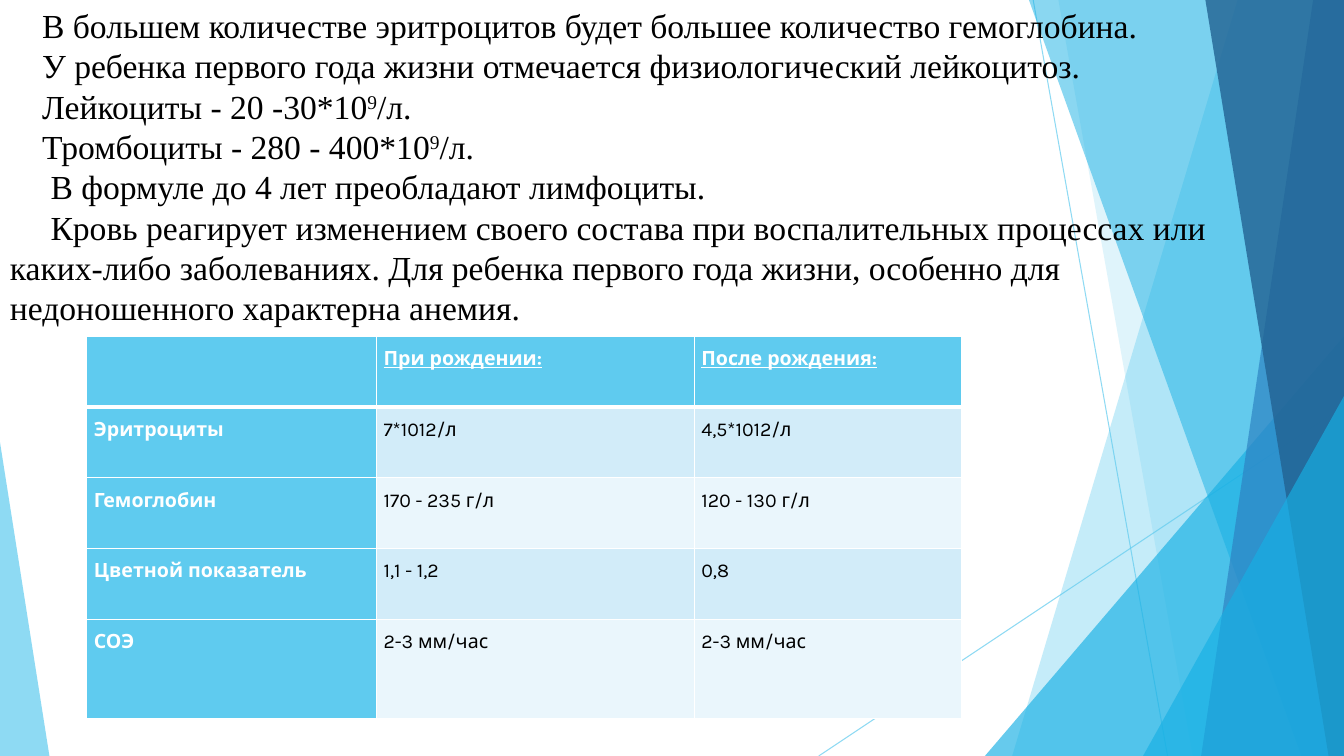
from dataclasses import dataclass

from lxml.etree import SubElement
from pptx import Presentation
from pptx.dml.color import RGBColor
from pptx.enum.shapes import MSO_CONNECTOR, MSO_SHAPE
from pptx.oxml.ns import qn
from pptx.util import Pt

SKY = RGBColor(0x5F, 0xCB, 0xEF)
CYAN = RGBColor(0x17, 0xB0, 0xE4)
BLUE = RGBColor(0x2E, 0x83, 0xC3)
NAVY = RGBColor(0x22, 0x62, 0x92)
BAND_DARK = RGBColor(0xD2, 0xEC, 0xF9)
BAND_LIGHT = RGBColor(0xEA, 0xF6, 0xFC)
WHITE = RGBColor(0xFF, 0xFF, 0xFF)
BLACK = RGBColor(0, 0, 0)

WIDTH, HEIGHT = 960, 540


@dataclass(frozen=True)
class Ray:
    start: tuple[float, float]
    end: tuple[float, float]


@dataclass(frozen=True)
class Facet:
    """A panel reaching the right edge, slanting from top_x down to bottom_x."""
    top_x: float
    bottom_x: float
    color: RGBColor
    opacity: int


@dataclass(frozen=True)
class Corner:
    """A right triangle standing on the bottom edge; apex is 0 (left) or 1 (right)."""
    left: float
    top: float
    width: float
    apex: int
    color: RGBColor
    opacity: int


@dataclass(frozen=True)
class Statement:
    """A paragraph whose odd parts between ^ marks are superscript."""
    text: str
    indent: float = 23


DECOR = [
    Ray((738, 0), (834, HEIGHT)),
    Ray((WIDTH, 290), (584.8, HEIGHT)),
    Facet(884, 723, SKY, 36),
    Facet(756, 852, SKY, 20),
    Corner(703.5, 240, 256.5, 1, CYAN, 66),
    Facet(735, 929.5, CYAN, 50),
    Facet(938, 858, BLUE, 70),
    Facet(861, 949, NAVY, 80),
    Corner(816.5, 283, 143.5, 1, CYAN, 66),
    Corner(0, 316, 35.3, 0, SKY, 70),
]

STATEMENTS = [
    Statement("В большем количестве эритроцитов будет большее количество гемоглобина."),
    Statement("У ребенка первого года жизни отмечается физиологический лейкоцитоз."),
    Statement("Лейкоциты - 20 -30*10^9^/л."),
    Statement("Тромбоциты - 280 - 400*10^9^/л."),
    Statement("В формуле до 4 лет преобладают лимфоциты.", 29),
    Statement("Кровь реагирует изменением своего состава при воспалительных процессах "
              "или каких-либо заболеваниях. Для ребенка первого года жизни, особенно "
              "для недоношенного характерна анемия.", 29),
]

BLOOD_VALUES = [
    ("", "При рождении:", "После рождения:"),
    ("Эритроциты", "7*1012/л", "4,5*1012/л"),
    ("Гемоглобин", "170 - 235 г/л", "120 - 130 г/л"),
    ("Цветной показатель", "1,1 - 1,2", "0,8"),
    ("СОЭ", "2-3 мм/час", "2-3 мм/час"),
]
COLUMN_WIDTHS = (207, 227, 191)
ROW_HEIGHTS = (50.6, 50.6, 50.6, 50.6, 70.6)


def set_opacity(fill_owner, percent: int) -> None:
    color = next(fill_owner.iter(qn("a:srgbClr")))
    SubElement(color, qn("a:alpha")).set("val", str(percent * 1000))


def paint(shape, color: RGBColor, opacity: int) -> None:
    shape.shadow.inherit = False
    shape.fill.solid()
    shape.fill.fore_color.rgb = color
    set_opacity(shape._element.spPr, opacity)
    shape.line.fill.background()


def draw_ray(shapes, ray: Ray) -> None:
    line = shapes.add_connector(MSO_CONNECTOR.STRAIGHT,
                                *map(Pt, ray.start), *map(Pt, ray.end))
    line.line.color.rgb = SKY
    line.line.width = Pt(0.75)
    properties = line._element.spPr
    set_opacity(properties, 70)
    SubElement(properties, qn("a:effectLst"))


def draw_facet(shapes, facet: Facet) -> None:
    outline = shapes.build_freeform(Pt(facet.top_x), 0)
    corners = [(WIDTH, 0), (WIDTH, HEIGHT), (facet.bottom_x, HEIGHT)]
    outline.add_line_segments([(Pt(x), Pt(y)) for x, y in corners], close=True)
    paint(outline.convert_to_shape(), facet.color, facet.opacity)


def draw_corner(shapes, corner: Corner) -> None:
    triangle = shapes.add_shape(MSO_SHAPE.ISOSCELES_TRIANGLE, Pt(corner.left), Pt(corner.top),
                                Pt(corner.width), Pt(HEIGHT - corner.top))
    triangle.adjustments[0] = corner.apex
    paint(triangle, corner.color, corner.opacity)


def set_borders(cell, bottom_width: float) -> None:
    properties = cell._tc.get_or_add_tcPr()
    for side, width in (("L", 1), ("R", 1), ("T", 1), ("B", bottom_width)):
        border = SubElement(properties, qn(f"a:ln{side}"), w=str(Pt(width)))
        fill = SubElement(border, qn("a:solidFill"))
        SubElement(fill, qn("a:srgbClr"), val=str(WHITE))


def style_cell(cell, text: str, row: int, column: int) -> None:
    heading = row == 0 or column == 0
    set_borders(cell, 3 if row == 0 else 1)
    cell.fill.solid()
    cell.fill.fore_color.rgb = SKY if heading else BAND_DARK if row % 2 else BAND_LIGHT
    cell.margin_left = cell.margin_right = Pt(5)
    cell.margin_top = cell.margin_bottom = 0
    cell.text_frame.text = text
    paragraph = cell.text_frame.paragraphs[0]
    paragraph.line_spacing = 1.5
    font = paragraph.runs[0].font if text else paragraph.font
    font.name = "Karla"
    font.size = Pt(14)
    font.bold = heading
    font.underline = row == 0
    font.color.rgb = WHITE if heading else BLACK


def draw_blood_table(shapes) -> None:
    table = shapes.add_table(len(ROW_HEIGHTS), len(COLUMN_WIDTHS), Pt(62), Pt(240),
                             Pt(sum(COLUMN_WIDTHS)), Pt(sum(ROW_HEIGHTS))).table
    for column, width in zip(table.columns, COLUMN_WIDTHS):
        column.width = Pt(width)
    for row, height in zip(table.rows, ROW_HEIGHTS):
        row.height = Pt(height)
    for r, values in enumerate(BLOOD_VALUES):
        for c, value in enumerate(values):
            style_cell(table.cell(r, c), value, r, c)


def draw_statements(shapes) -> None:
    frame = shapes.add_textbox(0, 0, Pt(904), Pt(240)).text_frame
    frame.word_wrap = True
    for i, statement in enumerate(STATEMENTS):
        paragraph = frame.add_paragraph() if i else frame.paragraphs[0]
        paragraph._p.get_or_add_pPr().set("indent", str(Pt(statement.indent)))
        for j, part in enumerate(statement.text.split("^")):
            run = paragraph.add_run()
            run.text = part
            run.font.name = "Times New Roman"
            run.font.size = Pt(24)
            run.font.color.rgb = BLACK
            if j % 2:
                run._r.get_or_add_rPr().set("baseline", "30000")


def main() -> None:
    deck = Presentation()
    deck.slide_width, deck.slide_height = Pt(WIDTH), Pt(HEIGHT)
    shapes = deck.slides.add_slide(deck.slide_layouts[6]).shapes
    painters = {Ray: draw_ray, Facet: draw_facet, Corner: draw_corner}
    for part in DECOR:
        painters[type(part)](shapes, part)
    draw_blood_table(shapes)
    draw_statements(shapes)
    deck.save("out.pptx")


if __name__ == "__main__":
    main()
